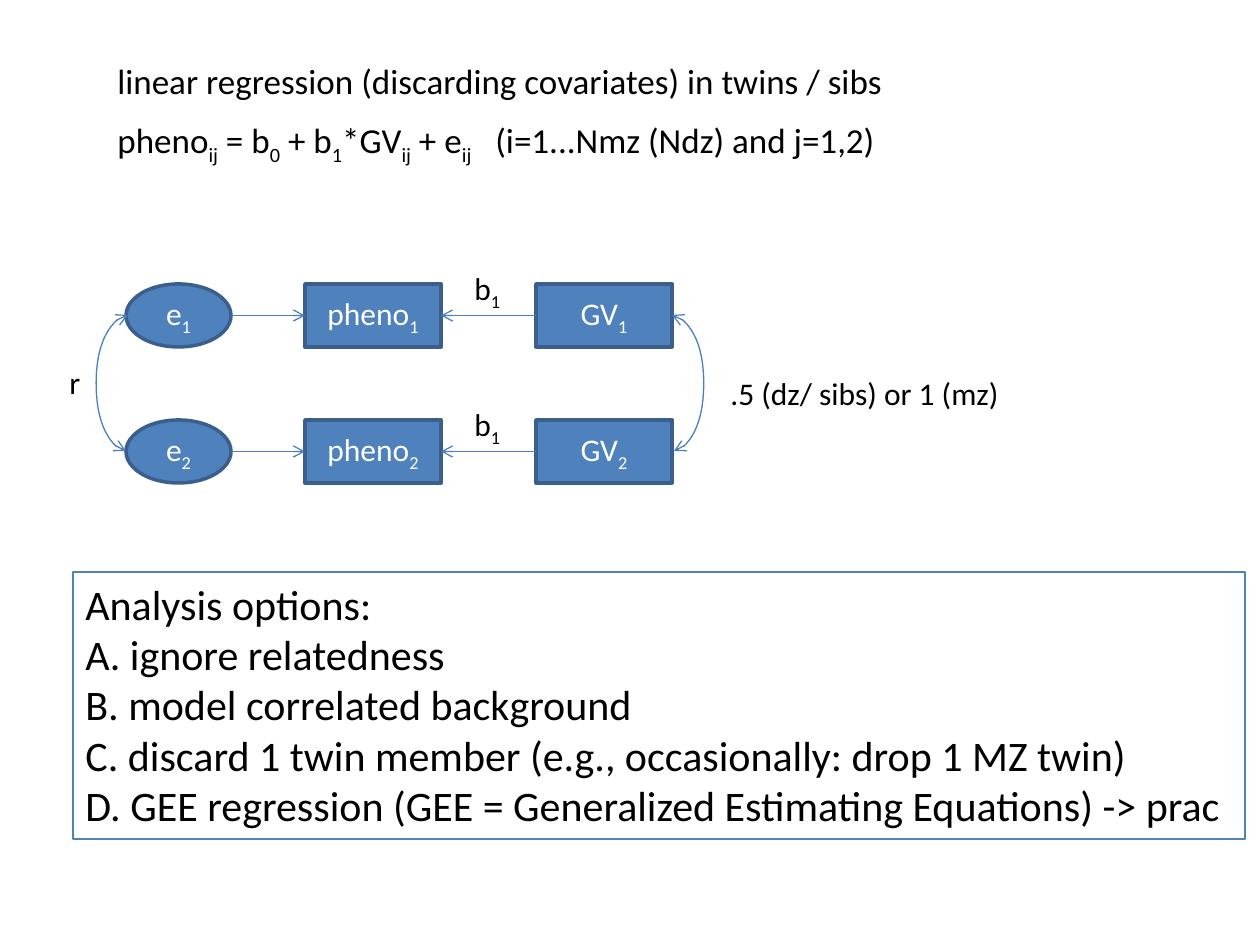
import pptx
import pptx.dml.color
import pptx.enum.shapes
import pptx.enum.text
import pptx.oxml
import pptx.oxml.ns
import pptx.util

PX = 914400 / 126
HUES = {"fill": "4F81BD", "edge": "3A5F8C", "link": "4B7EBC",
        "ink": "000000", "white": "FFFFFF"}
KIND = pptx.enum.shapes.MSO_SHAPE
LINK = pptx.enum.shapes.MSO_CONNECTOR
ALIGN = pptx.enum.text.PP_ALIGN
NS = pptx.oxml.ns.nsdecls("a")


def emu(*nums):
    return [round(n * PX) for n in nums]


def hue(name):
    return pptx.dml.color.RGBColor.from_string(HUES[name])


def write(frame, lines, size, ink="ink", align=ALIGN.LEFT, gap=0):
    """Fill the frame; in each line every second part between bars is a subscript."""
    font = {"name": "Calibri", "size": pptx.util.Pt(size)}
    for i, line in enumerate(lines):
        para = frame.add_paragraph() if i else frame.paragraphs[0]
        para.alignment = align
        if i and gap:
            para.space_before = pptx.util.Pt(gap)
        for j, part in enumerate(line.split("|")):
            if not part:
                continue
            run = para.add_run()
            run.text = part
            for key, val in font.items():
                setattr(run.font, key, val)
            run.font.color.rgb = hue(ink)
            if j % 2:
                run._r.get_or_add_rPr().set("baseline", "-25000")


def label(slide, box, lines, size=18, wrap=False, gap=0):
    text = slide.shapes.add_textbox(*emu(*box))
    form = {"word_wrap": wrap,
            "auto_size": pptx.enum.text.MSO_AUTO_SIZE.SHAPE_TO_FIT_TEXT}
    for key, val in form.items():
        setattr(text.text_frame, key, val)
    write(text.text_frame, lines, size, gap=gap)
    return text


def node(slide, kind, box, text):
    shape = slide.shapes.add_shape(kind, *emu(*box))
    shape.shadow.inherit = False
    shape.fill.solid()
    shape.fill.fore_color.rgb = hue("fill")
    shape.line.color.rgb = hue("edge")
    shape.line.width = pptx.util.Pt(2)
    shape.text_frame.vertical_anchor = pptx.enum.text.MSO_ANCHOR.MIDDLE
    write(shape.text_frame, [text], 18, "white", ALIGN.CENTER)
    return shape


def link(slide, kind, ends, tips):
    line = slide.shapes.add_connector(kind, *emu(*ends))
    line.line.color.rgb = hue("link")
    line.line.width = pptx.util.Pt(0.75)
    edge = line.line._get_or_add_ln()
    for tip in tips:
        edge.append(pptx.oxml.parse_xml(f'<a:{tip} {NS} type="arrow"/>'))
    line._element.spPr.append(pptx.oxml.parse_xml(f"<a:effectLst {NS}/>"))
    return line


def arc(slide, ends, bulge):
    """Two-headed curve that swings out by bulge px from its start."""
    line = link(slide, LINK.CURVE, ends, ["headEnd", "tailEnd"])
    ratio = round(bulge / abs(ends[2] - ends[0]) * 100000)
    geom = line._element.spPr.find(pptx.oxml.ns.qn("a:prstGeom"))
    for old in list(geom):
        geom.remove(old)
    geom.append(pptx.oxml.parse_xml(
        f'<a:avLst {NS}><a:gd name="adj1" fmla="val {ratio}"/></a:avLst>'))


def path_row(slide, left, top, num):
    """One twin: error -> phenotype <- genetic value."""
    high, wide = 63, 136
    mid = top + high / 2
    node(slide, KIND.OVAL, (left, top, 105, high), f"e|{num}")
    pheno = node(slide, KIND.RECTANGLE, (left + 179, top, wide, high), f"pheno|{num}")
    gene = node(slide, KIND.RECTANGLE, (left + 410, top, wide, high), f"GV|{num}")
    into = link(slide, LINK.STRAIGHT, (left + 105, mid, left + 179, mid), ["tailEnd"])
    into.end_connect(pheno, 1)
    back = link(slide, LINK.STRAIGHT,
                (left + 410, mid, left + 179 + wide, mid), ["tailEnd"])
    back.begin_connect(gene, 1)
    back.end_connect(pheno, 3)
    label(slide, (left + 336, top - 21, 53, 50), ["b|1"])


def diagram(slide, left, top):
    pitch, right = 136, left + 546
    for i in range(2):
        path_row(slide, left, top + i * pitch, i + 1)
    high, low = top + 31, top + 31 + pitch
    arc(slide, (left + 2, high, left, low), 32)
    arc(slide, (right, high, right + 2, low), 32)
    label(slide, (left - 69, top + 73, 37, 50), ["r"])
    label(slide, (right + 46, top + 84, 297, 50), [".5 (dz/ sibs) or 1 (mz)"])


def heading(slide, box):
    label(slide, box, [
        "linear regression (discarding covariates) in twins / sibs",
        "pheno|ij| = b|0| + b|1|*GV|ij| + e|ij|\t(i=1...Nmz (Ndz) and j=1,2)",
    ], 20, True, 10)


def options(slide, box):
    text = label(slide, box, [
        "Analysis options:",
        "A. ignore relatedness",
        "B. model correlated background",
        "C. discard 1 twin member (e.g., occasionally: drop 1 MZ twin)",
        "D. GEE regression (GEE = Generalized Estimating Equations) -> prac",
    ], 24)
    text.line.color.rgb = hue("fill")
    text.line.width = pptx.util.Pt(0.75)


def main():
    deck = pptx.Presentation()
    deck.slide_width, deck.slide_height = emu(1260, 945)
    slide = deck.slides.add_slide(deck.slide_layouts[6])
    diagram(slide, 126, 284)
    heading(slide, (105, 53, 1021, 115))
    options(slide, (73, 572, 1172, 267))
    deck.save("out.pptx")


if __name__ == "__main__":
    main()
